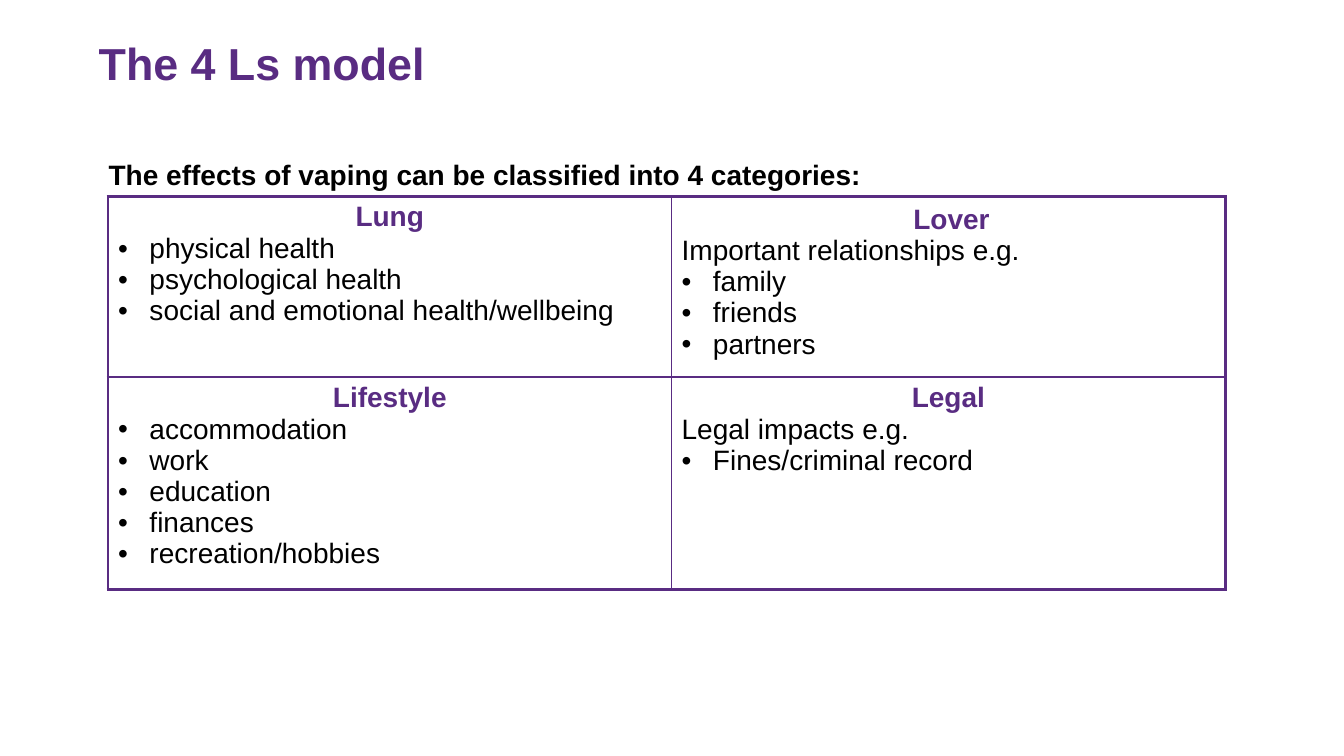
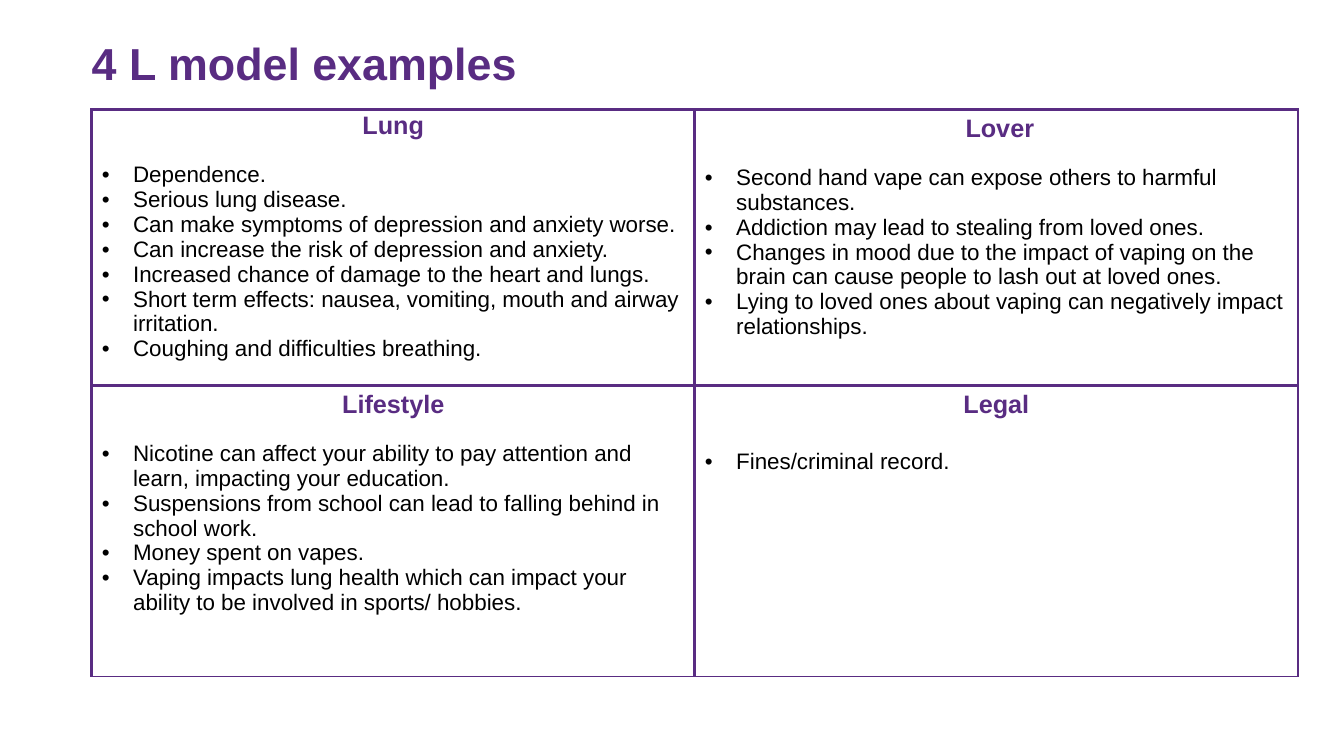
"""Build two slides on the 4 Ls model of vaping effects."""
import lxml.etree
import pptx
import pptx.dml.color
import pptx.enum.text
import pptx.oxml.ns
import pptx.util

Pt = pptx.util.Pt
PURPLE = pptx.dml.color.RGBColor(0x59, 0x2C, 0x82)
BLACK = pptx.dml.color.RGBColor(0x00, 0x00, 0x00)
FONT = "Arial"
CENTER = pptx.enum.text.PP_ALIGN.CENTER
BULLET_INDENT = 22.4
CELL_TOP = 3.6

SLIDES = [
    {
        "title": "The 4 Ls model",
        "title_box": (70.5, 30, 804, 69),
        "lead": "The effects of vaping can be classified into 4 categories:",
        "lead_box": (70.5, 72.7, 707, 57.6),
        "table_at": (77.2, 140.4),
        "columns": (402.5, 395.5),
        "rows": (129.2, 150.8),
        "borders": {"outer": 2.25, "inner": 1.5, "bottom": 2.25},
        "heading_size": 20,
        "body_size": 20,
        "cells": [
            [
                {"heading": "Lung",
                 "bullets": ["physical health", "psychological health",
                             "social and emotional health/wellbeing"]},
                {"heading": "Lover", "top": 5.2, "shift": 4.5,
                 "intro": "Important relationships e.g.",
                 "bullets": ["family", "friends", "partners"]},
            ],
            [
                {"heading": "Lifestyle",
                 "bullets": ["accommodation", "work", "education", "finances",
                             "recreation/hobbies"]},
                {"heading": "Legal",
                 "intro": "Legal impacts e.g.",
                 "bullets": ["Fines/criminal record"]},
            ],
        ],
    },
    {
        "title": "4 L model examples",
        "title_box": (65.5, 29.5, 862, 69),
        "table_at": (65.5, 78.3),
        "columns": (430.8, 430.8),
        "rows": (197.2, 207.8),
        "borders": {"outer": 2.25, "inner": 2.25, "bottom": 1.5},
        "heading_size": 18,
        "body_size": 16,
        "cells": [
            [
                {"heading": "Lung", "gap": 16, "spacing": 0.9,
                 "bullets": [
                     "Dependence.",
                     "Serious lung disease.",
                     "Can make symptoms of depression and anxiety worse.",
                     "Can increase the risk of depression and anxiety.",
                     "Increased chance of damage to the heart and lungs.",
                     "Short term effects: nausea, vomiting, mouth and airway irritation.",
                     "Coughing and difficulties breathing."]},
                {"heading": "Lover", "gap": 16, "shift": 5,
                 "bullets": [
                     "Second hand vape can expose others to harmful substances.",
                     "Addiction may lead to stealing from loved ones.",
                     "Changes in mood due to the impact of vaping on the brain can "
                     "cause people to lash out at loved ones.",
                     "Lying to loved ones about vaping can negatively impact relationships."]},
            ],
            [
                {"heading": "Lifestyle", "gap": 16,
                 "bullets": [
                     "Nicotine can affect your ability to pay attention and learn, "
                     "impacting your education.",
                     "Suspensions from school can lead to falling behind in school work.",
                     "Money spent on vapes.",
                     "Vaping impacts lung health which can impact your ability to be "
                     "involved in sports/ hobbies."]},
                {"heading": "Legal", "gap": 22,
                 "bullets": ["Fines/criminal record."]},
            ],
        ],
    },
]


def apply(target, values):
    for name, value in values.items():
        setattr(target, name, value)


def add_element(parent, tag, **attributes):
    return lxml.etree.SubElement(parent, pptx.oxml.ns.qn(tag), **attributes)


def write(paragraph, text, size, color=BLACK, bold=False, layout=None):
    run = paragraph.add_run()
    run.text = text
    apply(run.font, {"name": FONT, "size": Pt(size), "bold": bold})
    run.font.color.rgb = color
    apply(paragraph, layout or {})


def indent(paragraph, left, first=0):
    properties = paragraph._p.get_or_add_pPr()
    properties.set("marL", str(Pt(left)))
    properties.set("indent", str(Pt(first)))
    return properties


def add_text_box(slide, box, text, size, color, spacing, frame_format):
    frame = slide.shapes.add_textbox(*map(Pt, box)).text_frame
    apply(frame, {"word_wrap": True, **frame_format})
    write(frame.paragraphs[0], text, size, color, True, {"line_spacing": spacing})


def set_borders(cell, widths):
    cell.fill.background()
    properties = cell._tc.get_or_add_tcPr()
    for position, (side, width) in enumerate(widths.items()):
        line = add_element(properties, f"a:ln{side}", w=str(Pt(width)))
        fill = add_element(line, "a:solidFill")
        add_element(fill, "a:srgbClr", val=str(PURPLE))
        properties.insert(position, line)


def fill_cell(cell, content, heading_size, body_size):
    cell.margin_top = Pt(content.get("top", CELL_TOP))
    frame = cell.text_frame
    heading = frame.paragraphs[0]
    indent(heading, content.get("shift", 0))
    write(heading, content["heading"], heading_size, PURPLE, True, {
        "alignment": CENTER,
        "line_spacing": content.get("spacing", 1.0),
        "space_after": Pt(content.get("gap", 0)),
    })
    if "intro" in content:
        write(frame.add_paragraph(), content["intro"], body_size)
    for text in content["bullets"]:
        paragraph = frame.add_paragraph()
        properties = indent(paragraph, BULLET_INDENT, -BULLET_INDENT)
        add_element(properties, "a:buFont", typeface=FONT)
        add_element(properties, "a:buChar", char="•")
        write(paragraph, text, body_size)


def add_grid(slide, content):
    columns, rows = content["columns"], content["rows"]
    size = (sum(columns), sum(rows))
    table = slide.shapes.add_table(
        len(rows), len(columns), *map(Pt, content["table_at"] + size)).table
    apply(table, {"first_row": False, "horz_banding": False})
    for column, width in zip(table.columns, columns):
        column.width = Pt(width)
    borders = content["borders"]
    outer, inner = borders["outer"], borders["inner"]
    for r, row in enumerate(content["cells"]):
        table.rows[r].height = Pt(rows[r])
        for c, cell_content in enumerate(row):
            cell = table.cell(r, c)
            fill_cell(cell, cell_content, content["heading_size"], content["body_size"])
            set_borders(cell, {
                "L": inner if c else outer,
                "R": inner if c < len(columns) - 1 else outer,
                "T": inner if r else outer,
                "B": inner if r < len(rows) - 1 else borders["bottom"],
            })


def main():
    presentation = pptx.Presentation()
    apply(presentation, {"slide_width": Pt(960), "slide_height": Pt(540)})
    margins = ("margin_left", "margin_right", "margin_top", "margin_bottom")
    title_format = dict.fromkeys(margins, 0)
    lead_format = {"auto_size": pptx.enum.text.MSO_AUTO_SIZE.SHAPE_TO_FIT_TEXT}
    for content in SLIDES:
        slide = presentation.slides.add_slide(presentation.slide_layouts[6])
        add_text_box(slide, content["title_box"], content["title"], 32, PURPLE, 0.9, title_format)
        if "lead" in content:
            add_text_box(slide, content["lead_box"], content["lead"], 20, BLACK, 2.5, lead_format)
        add_grid(slide, content)
    presentation.save("out.pptx")


if __name__ == "__main__":
    main()
